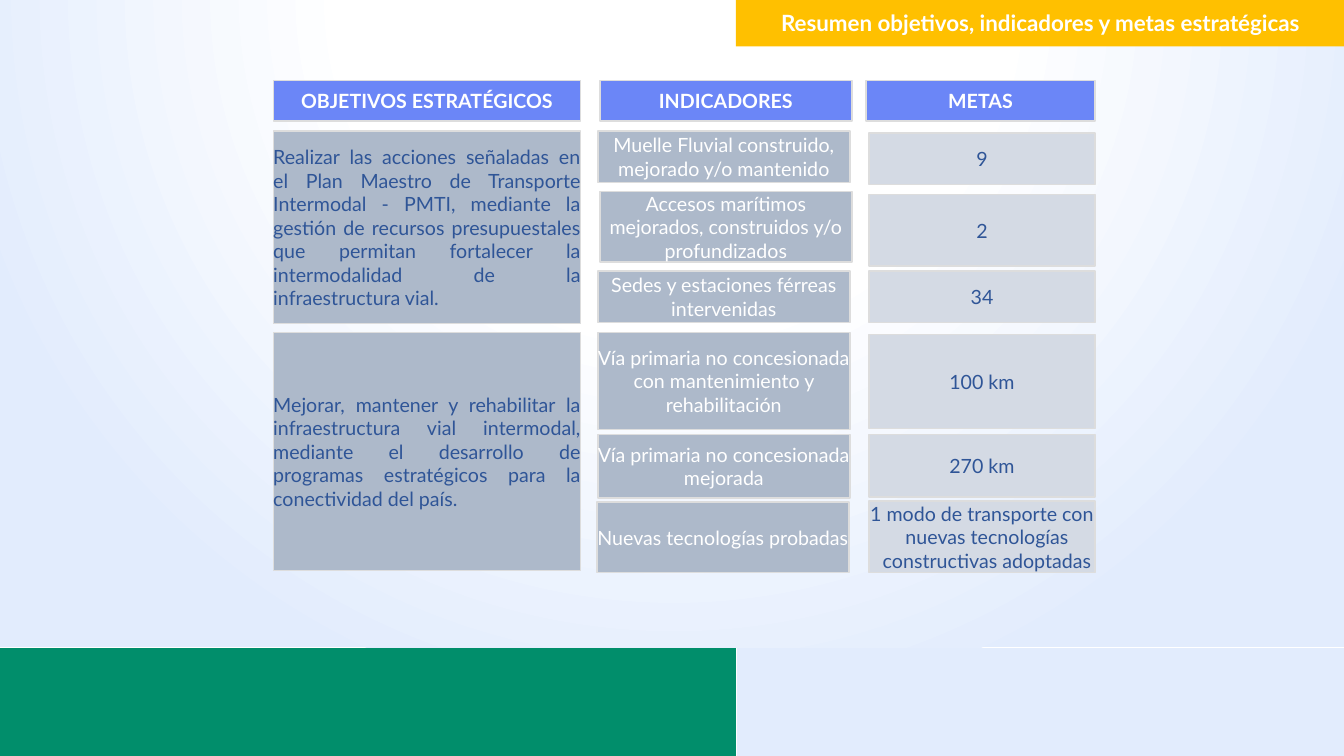
from lxml import etree
from pptx import Presentation
from pptx.dml.color import RGBColor
from pptx.enum.shapes import MSO_SHAPE
from pptx.enum.text import MSO_ANCHOR, PP_ALIGN
from pptx.oxml import parse_xml
from pptx.oxml.ns import nsdecls, qn
from pptx.util import Inches, Pt

COLORS = {
    "white": "FFFFFF", "pale": "E2ECFD", "green": "018E6B", "yellow": "FFC000",
    "header": "6B86F7", "slate": "ADB9CA", "mist": "D4DAE4",
    "border": "DDDDDD", "navy": "2F5597",
}
FONT = "Lato"
WIDTH, HEIGHT = 13.33, 7.5

# Column offsets and widths, from the left of the board
COLUMNS = {"objective": (0, 3.05), "indicator": (3.22, 2.5), "goal": (5.91, 2.24)}
HEADER_HEIGHT = 0.4
HEADERS = [  # text, offset, width
    ("OBJETIVOS ESTRATÉGICOS", 0, 3.05),
    ("INDICADORES", 3.24, 2.5),
    ("METAS", 5.88, 2.27),
]
# text, top from the board, height
OBJECTIVES = [
    ("Realizar las acciones señaladas en el Plan Maestro de Transporte Intermodal - PMTI, "
     "mediante la gestión de recursos presupuestales que permitan fortalecer la "
     "intermodalidad de la infraestructura vial.", 0.5, 1.91),
    ("Mejorar, mantener y rehabilitar la infraestructura vial intermodal, mediante el "
     "desarrollo de programas estratégicos para la conectividad del país.", 2.5, 2.36),
]
# text, top, height, sideways nudge
INDICATORS = [
    ("Muelle Fluvial construido, mejorado y/o mantenido", 0.5, 0.51, 0),
    ("Accesos marítimos mejorados, construidos y/o profundizados", 1.1, 0.7, 0.02),
    ("Sedes y estaciones férreas intervenidas", 1.89, 0.51, 0),
    ("Vía primaria no concesionada con mantenimiento y rehabilitación", 2.5, 0.96, 0),
    ("Vía primaria no concesionada mejorada", 3.51, 0.63, 0),
    ("Nuevas tecnologías probadas", 4.18, 0.7, -0.01),
]
GOALS = [
    ("9", 0.52, 0.51),
    ("2", 1.13, 0.71),
    ("34", 1.89, 0.51),
    ("100 km", 2.52, 0.93),
    ("270 km", 3.51, 0.62),
    ("1 modo de transporte con nuevas tecnologías constructivas adoptadas", 4.17, 0.71),
]


def color(name):
    return RGBColor.from_string(COLORS[name])


def add_block(slide, left, top, width, height, fill):
    shape = slide.shapes.add_shape(
        MSO_SHAPE.RECTANGLE, Inches(left), Inches(top), Inches(width), Inches(height))
    shape.shadow.inherit = False
    shape.fill.solid()
    shape.fill.fore_color.rgb = color(fill)
    shape.line.fill.background()
    return shape


def write(shape, text, size, ink, bold=False, align=PP_ALIGN.CENTER):
    frame = shape.text_frame
    frame.word_wrap = True
    frame.vertical_anchor = MSO_ANCHOR.MIDDLE
    paragraph = frame.paragraphs[0]
    paragraph.text = text
    paragraph.alignment = align
    paragraph.font.name = FONT
    paragraph.font.size = Pt(size)
    paragraph.font.bold = bold
    paragraph.font.color.rgb = color(ink)
    return paragraph


def add_cell(slide, box, text, fill, ink, **style):
    shape = add_block(slide, *box, fill)
    shape.line.color.rgb = color("border")
    shape.line.width = Pt(1)
    frame = shape.text_frame
    frame.margin_left = frame.margin_right = frame.margin_top = frame.margin_bottom = 0
    return write(shape, text, 14, ink, **style)


def set_radial_gradient(shape, stops):
    gradient = parse_xml(f'<a:gradFill {nsdecls("a")} rotWithShape="1"><a:gsLst/></a:gradFill>')
    for position, name in stops:
        stop = etree.SubElement(gradient[0], qn("a:gs"), pos=str(position * 1000))
        etree.SubElement(stop, qn("a:srgbClr"), val=COLORS[name])
    circle = etree.SubElement(gradient, qn("a:path"), path="circle")
    etree.SubElement(circle, qn("a:fillToRect"), l="50000", t="-80000", r="50000", b="180000")
    properties = shape._element.spPr
    properties.replace(properties.find(qn("a:solidFill")), gradient)


def add_backdrop(slide, width, height):
    # Soft glow above a two-colour footer
    glow = add_block(slide, 0, -0.03, width + 0.04, 6.45, "white")
    set_radial_gradient(glow, [(0, "white"), (43, "white"), (100, "pale")])
    footer_top, split = 6.43, 7.31
    add_block(slide, -0.02, footer_top, split + 0.01, height - footer_top, "green")
    add_block(slide, split, footer_top, width - split, height - footer_top, "pale")


def add_board(slide, left, top):
    for text, offset, width in HEADERS:
        add_cell(slide, (left + offset, top, width, HEADER_HEIGHT), text,
                 "header", "white", bold=True)

    def cell_box(column, row_top, height, nudge=0):
        offset, width = COLUMNS[column]
        return left + offset + nudge, top + row_top, width, height

    for text, *place in OBJECTIVES:
        add_cell(slide, cell_box("objective", *place), text, "slate", "navy",
                 align=PP_ALIGN.JUSTIFY)
    for text, *place in INDICATORS:
        add_cell(slide, cell_box("indicator", *place), text, "slate", "white")
    for text, *place in GOALS:
        paragraph = add_cell(slide, cell_box("goal", *place), text, "mist", "navy")
        # Hanging indent
        properties = paragraph._p.get_or_add_pPr()
        properties.set("marL", str(Inches(0.1)))
        properties.set("indent", str(Inches(-0.1)))


def add_title(slide, left, top, width, height):
    banner = add_block(slide, left, top, width, height, "yellow")
    write(banner, "Resumen objetivos, indicadores y metas estratégicas", 16, "white", bold=True)


def main():
    presentation = Presentation()
    presentation.slide_width = Inches(WIDTH)
    presentation.slide_height = Inches(HEIGHT)
    slide = presentation.slides.add_slide(presentation.slide_layouts[6])
    add_backdrop(slide, WIDTH, HEIGHT)
    add_board(slide, 2.71, 0.8)
    add_title(slide, 7.3, -0.01, 6.04, 0.47)
    presentation.save("out.pptx")


if __name__ == "__main__":
    main()
